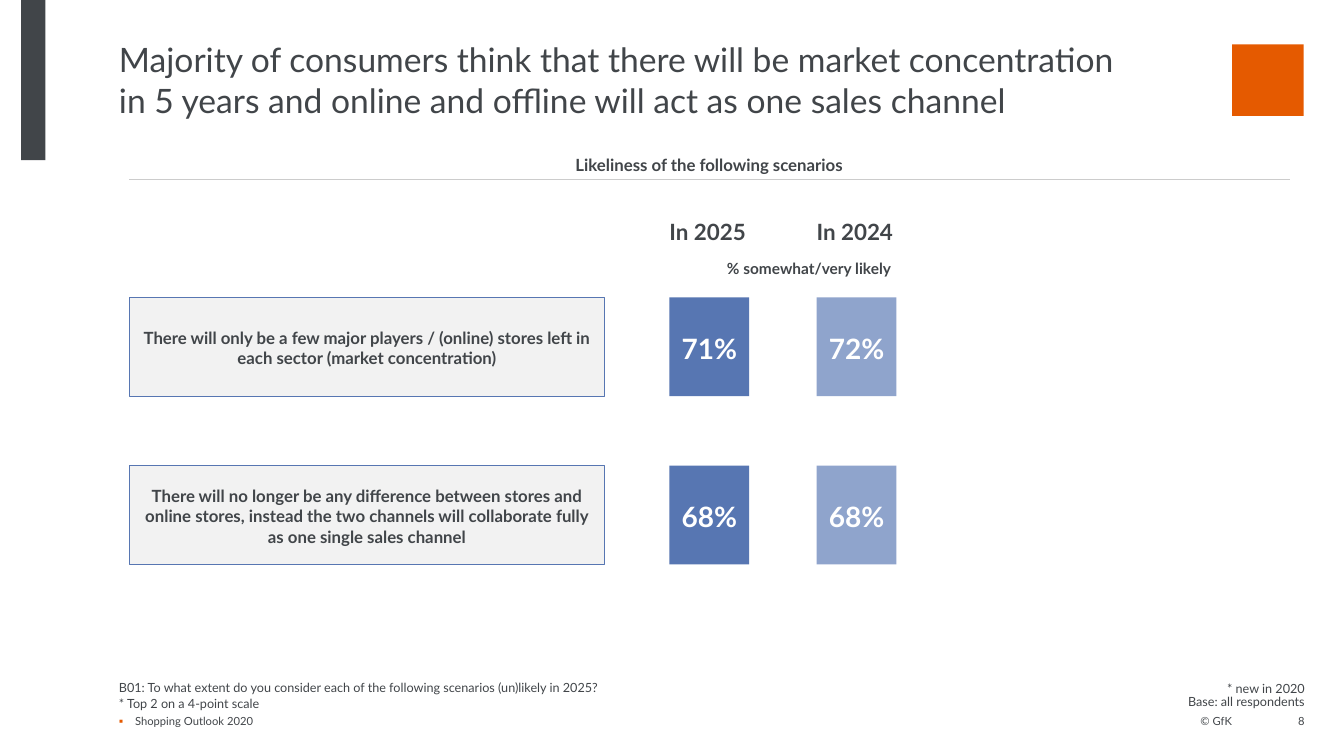
from lxml.etree import SubElement
from pptx import Presentation
from pptx.dml.color import RGBColor
from pptx.enum.shapes import MSO_CONNECTOR, MSO_SHAPE
from pptx.enum.text import MSO_ANCHOR, MSO_AUTO_SIZE, PP_ALIGN
from pptx.oxml.ns import qn
from pptx.util import Pt

PX = 9144  # 100 px to the inch
FONT = "Lato"
DARK = RGBColor(0x41, 0x45, 0x49)
ORANGE = RGBColor(0xE5, 0x5A, 0x00)
BLUE = RGBColor(0x57, 0x76, 0xB2)
PALE = RGBColor(0x8F, 0xA4, 0xCC)
LIGHT = RGBColor(0xF2, 0xF2, 0xF2)
RULE = RGBColor(0xCC, 0xCC, 0xCC)
WHITE = RGBColor(0xFF, 0xFF, 0xFF)

LEFT, CENTER, RIGHT = PP_ALIGN.LEFT, PP_ALIGN.CENTER, PP_ALIGN.RIGHT
TOP, MIDDLE, BOTTOM = MSO_ANCHOR.TOP, MSO_ANCHOR.MIDDLE, MSO_ANCHOR.BOTTOM

YEARS = [("In 2025", BLUE), ("In 2024", PALE)]
SCENES = [
    ("There will only be a few major players / (online) stores left in each "
     "sector (market concentration)", ["71%", "72%"]),
    ("There will no longer be any difference between stores and online stores, "
     "instead the two channels will collaborate fully as one single sales channel",
     ["68%", "68%"]),
]


def emu(*px):
    return [n * PX for n in px]


def bullet(par, char, color, indent):
    props = par._p.get_or_add_pPr()
    props.set("marL", str(indent * PX))
    props.set("indent", str(-indent * PX))
    tint = SubElement(props, qn("a:buClr"))
    SubElement(tint, qn("a:srgbClr"), val=str(color))
    SubElement(props, qn("a:buFont"), typeface=FONT)
    SubElement(props, qn("a:buChar"), char=char)


def write(shape, text, size=12, bold=False, color=DARK, align=LEFT, anchor=TOP,
          pad=(0, 0, 0, 0), space=None, mark=None):
    """Fill a shape with text, one paragraph a line."""
    frame = shape.text_frame
    frame.text = text
    frame.word_wrap = True
    frame.auto_size = MSO_AUTO_SIZE.NONE
    frame.vertical_anchor = anchor
    (frame.margin_left, frame.margin_top,
     frame.margin_right, frame.margin_bottom) = emu(*pad)
    for par in frame.paragraphs:
        par.alignment = align
        if space:
            par.line_spacing = space
        if mark:
            bullet(par, mark, ORANGE, 16)
        for run in par.runs:
            font = run.font
            font.name, font.size, font.bold = FONT, Pt(size), bold
            font.color.rgb = color


def label(slide, box, text, **style):
    write(slide.shapes.add_textbox(*emu(*box)), text, **style)


def block(slide, box, fill, edge=None):
    shape = slide.shapes.add_shape(MSO_SHAPE.RECTANGLE, *emu(*box))
    shape.shadow.inherit = False
    shape.fill.solid()
    shape.fill.fore_color.rgb = fill
    if edge:
        shape.line.color.rgb = edge
        shape.line.width = Pt(0.75)
    else:
        shape.line.fill.background()
    return shape


def header(slide, x, y, w, h):
    block(slide, (21, 0, 24, 159), DARK)
    block(slide, (1222, 44, 71, 71), ORANGE)
    title = slide.shapes.title
    title.left, title.top, title.width, title.height = emu(x, y, w, h)
    write(title, "Majority of consumers think that there will be market "
          "concentration in 5 years and online and offline will act as one "
          "sales channel", size=24)


def heading(slide, x, y, w, h):
    label(slide, (x, y, w, h), "Likeliness of the following scenarios",
          bold=True, align=CENTER, anchor=MIDDLE)
    base = y + h - 1
    line = slide.shapes.add_connector(
        MSO_CONNECTOR.STRAIGHT, *emu(x, base, x + w, base))
    line.line.color.rgb = RULE
    line.line.width = Pt(0.5)
    SubElement(line._element.spPr, qn("a:effectLst"))


def grid(slide, x, y):
    """Year heads above rows of one scenario and its shares."""
    first, step, tall, pitch = x + 536, 146, 98, 167
    body = y + 85
    for col, (year, _) in enumerate(YEARS):
        label(slide, (first + col * step, y, 76, 19), year, size=16,
              bold=True, space=1.25)
    label(slide, (first + 57, y + 42, 440, 28), "% somewhat/very likely",
          size=11, bold=True, space=1.25)
    style = {"bold": True, "align": CENTER, "anchor": MIDDLE,
             "pad": (10, 7, 10, 5)}
    for row, (scene, shares) in enumerate(SCENES):
        top = body + row * pitch
        write(block(slide, (x, top, 472, tall), LIGHT, BLUE), scene, **style)
        for col, (share, (_, fill)) in enumerate(zip(shares, YEARS)):
            tile = block(slide, (first + col * step, top, 79, tall), fill)
            write(tile, share, size=20, color=WHITE, **style)


def footer(slide, x, y, w):
    end = x + w
    label(slide, (x, y, 893, 15),
          "B01: To what extent do you consider each of the following scenarios "
          "(un)likely in 2025?\n* Top 2 on a 4-point scale", size=9, anchor=BOTTOM)
    note = {"size": 9, "align": RIGHT, "anchor": BOTTOM, "pad": (0, 0, 0, 4)}
    label(slide, (end - 157, y - 11, 157, 16), "* new in 2020", **note)
    label(slide, (end - 187, y, 187, 17), "Base: all respondents", **note)
    low = y + 17
    label(slide, (x, low, 893, 15), "Shopping Outlook 2020", size=8,
          anchor=BOTTOM, mark="▪")
    label(slide, (end - 127, low, 55, 15), "© GfK", size=8, align=RIGHT,
          anchor=BOTTOM, space=1.25)
    label(slide, (end - 71, low, 71, 15), "8", size=8, align=RIGHT, anchor=BOTTOM)


def main():
    deck = Presentation()
    deck.slide_width, deck.slide_height = emu(1333, 750)
    slide = deck.slides.add_slide(deck.slide_layouts.get_by_name("Title Only"))
    header(slide, 118, 39, 990, 71)
    heading(slide, 128, 147, 1151, 32)
    grid(slide, 128, 210)
    footer(slide, 118, 690, 1176)
    deck.save("out.pptx")


if __name__ == "__main__":
    main()
